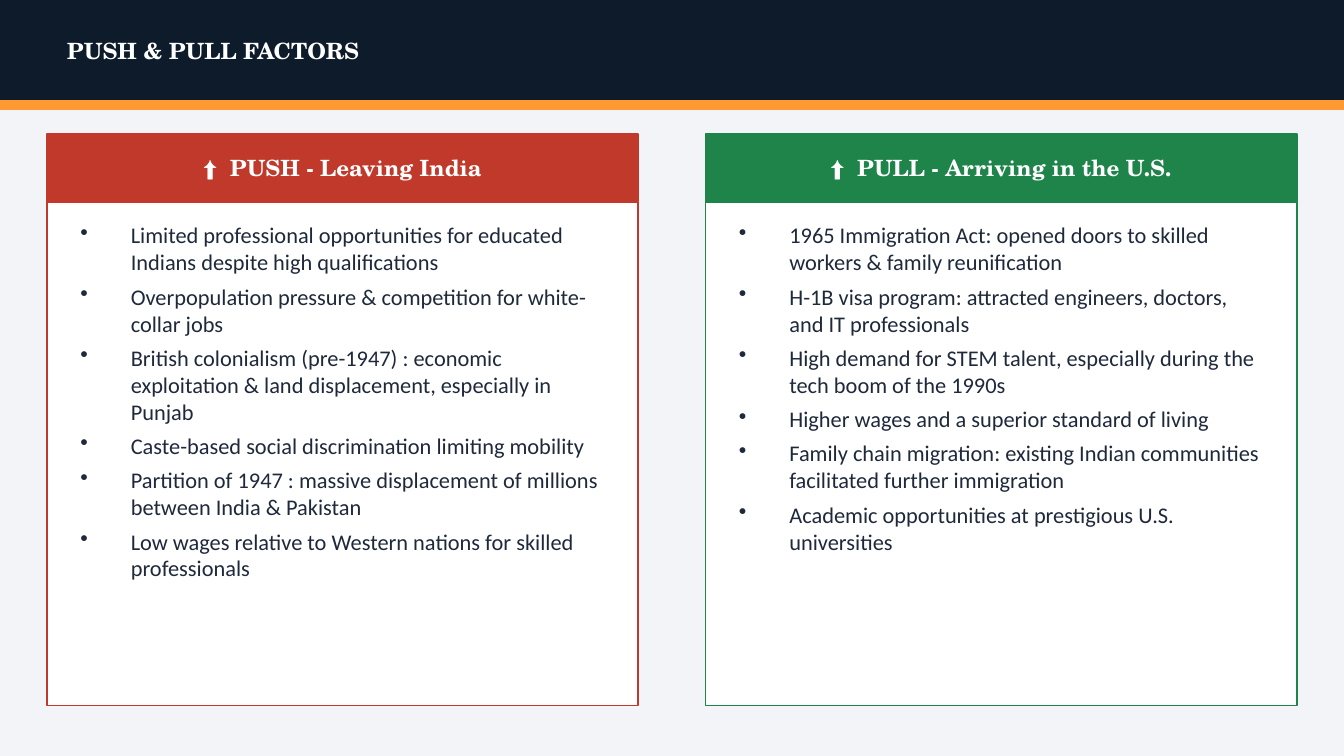
from dataclasses import dataclass

from lxml.etree import SubElement
from pptx import Presentation
from pptx.dml.color import RGBColor
from pptx.enum.shapes import MSO_SHAPE
from pptx.enum.text import MSO_ANCHOR, PP_ALIGN
from pptx.oxml.ns import qn
from pptx.slide import Slide
from pptx.text.text import TextFrame, _Paragraph
from pptx.util import Inches, Pt

NAVY = RGBColor(0x0D, 0x1B, 0x2A)
ORANGE = RGBColor(0xFF, 0x99, 0x33)
RED = RGBColor(0xC0, 0x39, 0x2B)
GREEN = RGBColor(0x1E, 0x84, 0x49)
WHITE = RGBColor(0xFF, 0xFF, 0xFF)
PALE = RGBColor(0xF2, 0xF4, 0xF7)
INK = RGBColor(0x1E, 0x29, 0x3B)

SERIF = "TeX Gyre Schola"
SANS = "Calibri"
WIDTH = 10
HEIGHT = WIDTH * 9 / 16
BAR = 0.75
LEFT, TOP = 0.35, 1
CARD, STEP = 4.4, 4.9
HEAD, BODY = 0.5, 3.75
PAD = 0.15
INDENT = Inches(3 / 8)


@dataclass(frozen=True)
class Box:
    left: float
    top: float
    width: float
    height: float

    def lengths(self) -> list[int]:
        return [Inches(n) for n in (self.left, self.top, self.width, self.height)]


@dataclass(frozen=True)
class Panel:
    title: str
    color: RGBColor
    points: tuple[str, ...]


PANELS = (
    Panel("⬆  PUSH - Leaving India", RED, (
        "Limited professional opportunities for educated Indians despite high qualifications",
        "Overpopulation pressure & competition for white-collar jobs",
        "British colonialism (pre-1947) : economic exploitation & land displacement, especially in Punjab",
        "Caste-based social discrimination limiting mobility",
        "Partition of 1947 : massive displacement of millions between India & Pakistan",
        "Low wages relative to Western nations for skilled professionals",
    )),
    Panel("⬆  PULL - Arriving in the U.S.", GREEN, (
        "1965 Immigration Act: opened doors to skilled workers & family reunification",
        "H-1B visa program: attracted engineers, doctors, and IT professionals",
        "High demand for STEM talent, especially during the tech boom of the 1990s",
        "Higher wages and a superior standard of living",
        "Family chain migration: existing Indian communities facilitated further immigration",
        "Academic opportunities at prestigious U.S. universities",
    )),
)


def add_rect(slide: Slide, box: Box, fill: RGBColor, line: RGBColor) -> None:
    rect = slide.shapes.add_shape(MSO_SHAPE.RECTANGLE, *box.lengths())
    rect.shadow.inherit = False
    rect.fill.solid()
    rect.fill.fore_color.rgb = fill
    rect.line.color.rgb = line
    rect.line.width = Pt(1)


def add_frame(slide: Slide, box: Box, text: str) -> TextFrame:
    frame = slide.shapes.add_textbox(*box.lengths()).text_frame
    frame.word_wrap = True
    frame.text = text
    return frame


def set_font(para: _Paragraph, name: str, color: RGBColor, bold: bool) -> None:
    for font in (para.font, *(run.font for run in para.runs)):
        font.name = name
        font.size = Pt(12)
        font.bold = bold
        font.color.rgb = color


def add_title(slide: Slide, box: Box, text: str, align: PP_ALIGN) -> None:
    frame = add_frame(slide, box, text)
    frame.vertical_anchor = MSO_ANCHOR.MIDDLE
    para = frame.paragraphs[0]
    para.alignment = align
    set_font(para, SERIF, WHITE, True)


def add_list(slide: Slide, box: Box, points: tuple[str, ...]) -> None:
    frame = add_frame(slide, box, "\n".join(points))
    for para in frame.paragraphs:
        para.space_after = Pt(4)
        props = para._p.get_or_add_pPr()
        props.set("marL", str(INDENT))
        props.set("indent", str(-INDENT))
        SubElement(props, qn("a:buSzPct")).set("val", "100000")
        SubElement(props, qn("a:buChar")).set("char", "•")
        set_font(para, SANS, INK, False)


def add_panel(slide: Slide, left: float, panel: Panel) -> None:
    head = Box(left, TOP, CARD, HEAD)
    body = Box(left, TOP + HEAD, CARD, BODY)
    inner = Box(left + PAD, body.top + 0.1, CARD - 2 * PAD, BODY - 0.25)
    add_rect(slide, head, panel.color, panel.color)
    add_title(slide, head, panel.title, PP_ALIGN.CENTER)
    add_rect(slide, body, WHITE, panel.color)
    add_list(slide, inner, panel.points)


def main() -> None:
    deck = Presentation()
    deck.slide_width = Inches(WIDTH)
    deck.slide_height = Inches(HEIGHT)
    slide = deck.slides.add_slide(deck.slide_layouts[6])
    slide.background.fill.solid()
    slide.background.fill.fore_color.rgb = PALE

    add_rect(slide, Box(0, 0, WIDTH, BAR), NAVY, NAVY)
    add_title(slide, Box(0.4, 0, 9.2, BAR), "PUSH & PULL FACTORS", PP_ALIGN.LEFT)
    add_rect(slide, Box(0, BAR, WIDTH, 0.06), ORANGE, ORANGE)
    for index, panel in enumerate(PANELS):
        add_panel(slide, LEFT + index * STEP, panel)

    deck.save("out.pptx")


if __name__ == "__main__":
    main()
